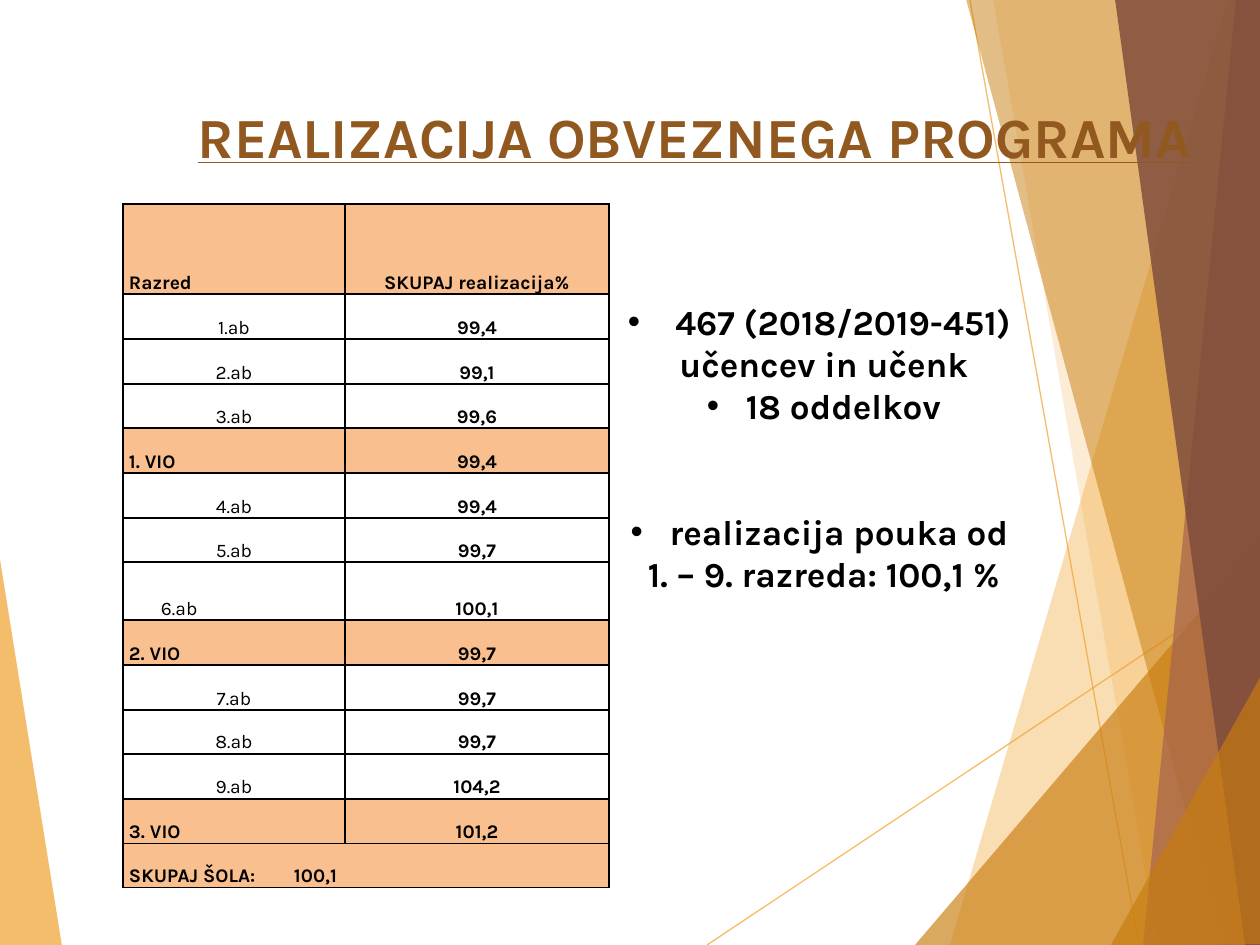
from itertools import cycle, islice
from lxml.etree import SubElement
from pptx import Presentation
from pptx.dml.color import RGBColor
from pptx.enum.text import MSO_ANCHOR as ANCHOR, PP_ALIGN as ALIGN
from pptx.oxml.ns import qn
from pptx.util import Pt

SCALE = 914400 / 126
FONT = "Karla"
C = {
    "black": "000000",
    "title": "91581F",
    "peach": "FABF8F",
    "amber": "F0A22E",
    "ochre": "C87D0E",
    "clay": "A5644E",
    "umber": "7C4B3B",
}
WEDGES = [
    ("amber", 70, [(-1, 553), (62, 946), (-1, 945)]),
    ("amber", 36, [(1228, 0), (950, 945), (1262, 946), (1261, 0)]),
    ("amber", 20, [(993, -1), (1158, 945), (1261, 945), (1261, -1)]),
    ("ochre", 66, [(915, 945), (1260, 541), (1261, 945)]),
    ("ochre", 50, [(966, -1), (1222, 945), (1261, 944), (1261, -1)]),
    ("clay", 70, [(1236, -1), (1143, 945), (1261, 945), (1260, -1)]),
    ("umber", 82, [(1115, -1), (1245, 945), (1262, 945), (1260, -1)]),
    ("ochre", 66, [(1111, 945), (1262, 674), (1262, 944)]),
]
RAYS = [(707, 945, 1261, 576), (970, 0, 1139, 945)]
GRADES = [
    ("Razred", "SKUPAJ realizacija%"),
    ("1.ab", "99,4"),
    ("2.ab", "99,1"),
    ("3.ab", "99,6"),
    ("1. VIO", "99,4"),
    ("4.ab", "99,4"),
    ("5.ab", "99,7"),
    ("6.ab", "100,1"),
    ("2. VIO", "99,7"),
    ("7.ab", "99,7"),
    ("8.ab", "99,7"),
    ("9.ab", "104,2"),
    ("3. VIO", "101,2"),
    ("SKUPAJ ŠOLA:\t100,1", ""),
]
FACTS = [
    (True, 0, [(" ", False), ("467 (2018/2019-451) ", True)]),
    (False, 0, [("učencev in učenk", True)]),
    (True, 0, [("18 oddelkov", True)]),
    (True, 48, [("realizacija pouka od ", True)]),
    (False, 0, [("1. – 9. razreda: 100,1 %", True)]),
]


def px(n):
    return round(n * SCALE)


def rgb(name):
    return RGBColor.from_string(C[name])


def set_alpha(fill_parent, percent):
    color = next(fill_parent.iter(qn("a:srgbClr")))
    SubElement(color, qn("a:alpha"), val=str(percent * 1000))


def add_run(p, text, size, color="black", bold=True, underline=None):
    r = p.add_run()
    r.text = text
    f = r.font
    f.name, f.size, f.bold, f.underline = FONT, Pt(size), bold, underline
    f.color.rgb = rgb(color)


def add_box(s, x, y, w, h):
    tf = s.shapes.add_textbox(px(x), px(y), px(w), px(h)).text_frame
    tf.word_wrap = True
    tf.vertical_anchor = ANCHOR.TOP
    return tf


def add_wedge(s, x, y, color, alpha, points):
    points = [(x + a, y + b) for a, b in points]
    builder = s.shapes.build_freeform(*points[0], scale=SCALE)
    builder.add_line_segments(points[1:], close=True)
    sp = builder.convert_to_shape()
    sp.shadow.inherit = False
    sp.fill.solid()
    sp.fill.fore_color.rgb = rgb(color)
    set_alpha(sp._element.spPr, alpha)
    sp.line.fill.background()


def add_ray(s, x, y, x1, y1, x2, y2):
    ray = s.shapes.add_connector(1, px(x + x1), px(y + y1), px(x + x2), px(y + y2))
    ray.line.color.rgb = rgb("amber")
    ray.line.width = Pt(0.75)
    set_alpha(ray._element.spPr, 70)
    SubElement(ray._element.spPr, qn("a:effectLst"))


def backdrop(s, x, y):
    add_wedge(s, x, y, *WEDGES[0])
    for ray in RAYS:
        add_ray(s, x, y, *ray)
    for wedge in WEDGES[1:]:
        add_wedge(s, x, y, *wedge)


def title(s, x, y, w, h):
    p = add_box(s, x, y, w, h).paragraphs[0]
    p.alignment = ALIGN.CENTER
    add_run(p, "REALIZACIJA OBVEZNEGA PROGRAMA", 32.4, "title", underline=True)


def facts(s, x, y, w, h):
    tf = add_box(s, x, y, w, h)
    for i, (bullet, gap, runs) in enumerate(FACTS):
        p = tf.add_paragraph() if i else tf.paragraphs[0]
        p.alignment = ALIGN.CENTER
        p.space_before = Pt(gap)
        if bullet:
            pPr = p._p.get_or_add_pPr()
            pPr.set("marL", str(px(39)))
            pPr.set("indent", str(px(-39)))
            SubElement(pPr, qn("a:buFont"), typeface="Arial")
            SubElement(pPr, qn("a:buChar"), char="•")
        for text, bold in runs:
            add_run(p, text, 20, bold=bold)


def style_cell(cell, shaded):
    cell.vertical_anchor = ANCHOR.BOTTOM
    cell.margin_left = cell.margin_right = px(6)
    cell.margin_top = cell.margin_bottom = 0
    tcPr = cell._tc.get_or_add_tcPr()
    for side in ("lnL", "lnR", "lnT", "lnB"):
        ln = SubElement(tcPr, qn(f"a:{side}"), w=str(Pt(1)))
        fill = SubElement(ln, qn("a:solidFill"))
        SubElement(fill, qn("a:srgbClr"), val=C["black"])
    if shaded:
        cell.fill.solid()
        cell.fill.fore_color.rgb = rgb("peach")
    else:
        cell.fill.background()


def grade_table(s, x, y, w, h):
    table = s.shapes.add_table(len(GRADES), 2, px(x), px(y), px(w), px(h)).table
    table.first_row = table.horz_banding = False
    table.columns[0].width = px(222)
    table.columns[1].width = px(w - 222)
    step = list(islice(cycle((45, 45, 44)), 6))
    for row, height in zip(table.rows, [90, *step, 58, *step]):
        row.height = px(height)
    for i, texts in enumerate(GRADES):
        shaded = not texts[0].endswith("ab")
        for j, text in enumerate(texts):
            cell = table.cell(i, j)
            style_cell(cell, shaded)
            if not text:
                continue
            p = cell.text_frame.paragraphs[0]
            p.line_spacing = 1.5 if text == "100,1" else 1.15
            pPr = p._p.get_or_add_pPr()
            if text == "6.ab":
                pPr.set("marL", str(px(32)))
            elif j or not shaded:
                p.alignment = ALIGN.CENTER
            if "\t" in text:
                tabs = SubElement(pPr, qn("a:tabLst"))
                SubElement(tabs, qn("a:tab"), pos=str(px(165)), algn="l")
            add_run(p, text, 11, bold=bool(j) or shaded)
    table.cell(len(GRADES) - 1, 0).merge(table.cell(len(GRADES) - 1, 1))


def main():
    prs = Presentation()
    prs.slide_width, prs.slide_height = px(1260), px(945)
    s = prs.slides.add_slide(prs.slide_layouts[6])
    backdrop(s, 0, 0)
    title(s, 144, 96, 1101, 158)
    facts(s, 174, 294, 1300, 425)
    grade_table(s, 123, 204, 486, 684)
    prs.save("out.pptx")


if __name__ == "__main__":
    main()
